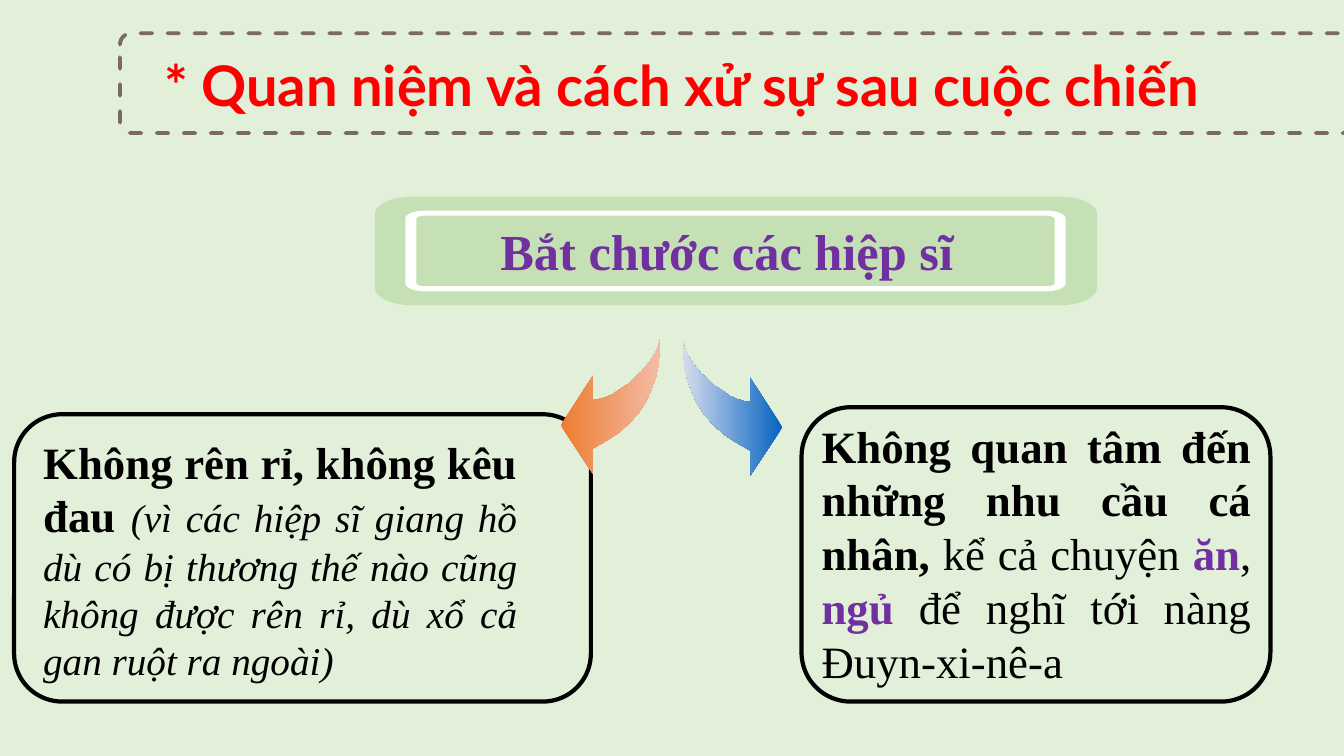
from dataclasses import dataclass
from math import cos, pi, sin

from pptx import Presentation
from pptx.dml.color import RGBColor
from pptx.enum.dml import MSO_LINE_DASH_STYLE as Dash
from pptx.enum.shapes import MSO_SHAPE as Preset
from pptx.enum.text import MSO_AUTO_SIZE as AutoSize, PP_ALIGN as Align
from pptx.oxml.ns import qn
from pptx.util import Inches, Pt

COLORS = {
    "background": "E2F0D9", "title": "FF0000", "frame": "7B6A63",
    "ink": "000000", "accent": "7030A0", "band": "C5E0B4", "white": "FFFFFF",
    "orange": "ED7D31", "peach": "F4BBA7", "blue": "0563C1", "mist": "D8DDEE",
}
SERIF = "Times New Roman"
Point = tuple[float, float]


@dataclass(frozen=True)
class Area:
    left: float
    top: float
    width: float
    height: float

    def lengths(self) -> list[int]:
        return [Inches(v) for v in (self.left, self.top, self.width, self.height)]


@dataclass(frozen=True)
class Span:
    text: str
    size: int = 32
    color: str = "ink"
    bold: bool = False
    italic: bool = False


@dataclass(frozen=True)
class TextBlock:
    area: Area
    spans: list[Span]
    align: Align | None = None
    font: str = SERIF
    grow: bool = True
    top_inset: float = 0.05


@dataclass(frozen=True)
class Frame:
    area: Area
    corner: float
    color: str
    weight: float
    dash: Dash | None = None


@dataclass(frozen=True)
class Arrow:
    tail_x: float
    tail_y: float
    direction: int
    colors: tuple[str, str]
    angle: int


TITLE_FRAME = Frame(Area(1.19, 0.33, 13.93, 0.99), 0.113, "frame", 2.75, Dash.DASH)
CARD_FRAMES = [
    Frame(Area(7.95, 4.04, 4.65, 2.92), 0.167, "ink", 3),
    Frame(Area(0.14, 4.11, 5.72, 2.85), 0.167, "ink", 3),
]
TITLE = TextBlock(
    Area(1.53, 0.45, 13.44, 0.88),
    [Span("* Quan niệm và cách xử sự sau cuộc chiến", 40, "title", True)],
    font="Lato",
)
LEFT_CARD = TextBlock(
    Area(0.33, 4.26, 4.9, 2.59),
    [
        Span("Không rên rỉ, không kêu đau ", bold=True),
        Span("(vì các hiệp sĩ giang hồ dù có bị thương thế nào cũng "
             "không được rên rỉ, dù xổ cả gan ruột ra ngoài)", 28, italic=True),
    ],
    Align.JUSTIFY,
)
RIGHT_CARD = TextBlock(
    Area(8.05, 4.1, 4.46, 2.79),
    [
        Span("Không quan tâm đến những nhu cầu cá nhân, ", bold=True),
        Span("kể cả chuyện "),
        Span("ăn", color="accent", bold=True),
        Span(", "),
        Span("ngủ ", color="accent", bold=True),
        Span("để nghĩ tới nàng Đuyn-xi-nê-a"),
    ],
    Align.JUSTIFY,
)
HEADING = TextBlock(
    Area(4.03, 2.08, 6.36, 0.63),
    [Span("Bắt chước các hiệp sĩ", 36, "accent", True)],
    Align.CENTER, grow=False, top_inset=0.1,
)
ARROWS = [
    Arrow(6.55, 3.34, -1, ("orange", "peach"), 0),
    Arrow(6.77, 3.36, 1, ("blue", "mist"), 180),
]
ARROW_OUTLINE: list[Point] = [
    (0, 0), (0.01, 0.15), (0.02, 0.29), (0.05, 0.42), (0.1, 0.55),
    (0.15, 0.66), (0.22, 0.76), (0.31, 0.86), (0.41, 0.95), (0.53, 1.03),
    (0.67, 1.11), (0.67, 1.36), (0.99, 0.88), (0.67, 0.39), (0.67, 0.63),
    (0.61, 0.62), (0.54, 0.6), (0.47, 0.57), (0.4, 0.52), (0.32, 0.47),
    (0.26, 0.41), (0.19, 0.35), (0.13, 0.28), (0.08, 0.21), (0.04, 0.14),
    (0.01, 0.06),
]


def rgb(name: str) -> RGBColor:
    return RGBColor.from_string(COLORS[name])


def rounded_outline(area: Area, radius_x: float, radius_y: float) -> list[Point]:
    center_x, center_y = area.left + area.width / 2, area.top + area.height / 2
    reach_x, reach_y = area.width / 2 - radius_x, area.height / 2 - radius_y
    points = []
    for quarter, (side_x, side_y) in enumerate([(1, 1), (-1, 1), (-1, -1), (1, -1)]):
        for step in range(9):
            angle = (quarter + step / 8) * pi / 2
            points.append((center_x + side_x * reach_x + radius_x * cos(angle),
                           center_y + side_y * reach_y + radius_y * sin(angle)))
    return points


def add_outline(page, *contours: list[Point]):
    first, *others = [[(Inches(x), Inches(y)) for x, y in contour] for contour in contours]
    builder = page.shapes.build_freeform(*first[0])
    builder.add_line_segments(first[1:], close=True)
    for contour in others:
        builder.move_to(*contour[0])
        builder.add_line_segments(contour[1:], close=True)
    shape = builder.convert_to_shape()
    shape.shadow.inherit = False
    shape.line.fill.background()
    return shape


def fill_solid(shape, color: str) -> None:
    shape.fill.solid()
    shape.fill.fore_color.rgb = rgb(color)


def add_frame(page, frame: Frame) -> None:
    shape = page.shapes.add_shape(Preset.ROUNDED_RECTANGLE, *frame.area.lengths())
    shape.adjustments[0] = frame.corner
    shape.shadow.inherit = False
    shape.fill.background()
    shape.line.color.rgb = rgb(frame.color)
    shape.line.width = Pt(frame.weight)
    if frame.dash:
        shape.line.dash_style = frame.dash
        shape._element.spPr.find(qn("a:ln")).set("cap", "rnd")


def add_text(page, block: TextBlock) -> None:
    box = page.shapes.add_textbox(*block.area.lengths())
    text = box.text_frame
    text.word_wrap = True
    text.auto_size = AutoSize.SHAPE_TO_FIT_TEXT if block.grow else AutoSize.NONE
    text.margin_top = text.margin_bottom = Inches(block.top_inset)
    para = text.paragraphs[0]
    para.alignment = block.align
    para.font.name = block.font
    for span in block.spans:
        run = para.add_run()
        run.text = span.text
        run.font.name = block.font
        run.font.size = Pt(span.size)
        run.font.bold = span.bold
        run.font.italic = span.italic
        run.font.color.rgb = rgb(span.color)


def add_arrow(page, arrow: Arrow) -> None:
    shape = add_outline(page, [(arrow.tail_x + arrow.direction * x, arrow.tail_y + y)
                               for x, y in ARROW_OUTLINE])
    shape.fill.gradient()
    shape.fill.gradient_angle = arrow.angle
    for stop, color in zip(shape.fill.gradient_stops, arrow.colors):
        stop.color.rgb = rgb(color)


def main() -> None:
    deck = Presentation()
    deck.slide_width, deck.slide_height = Inches(13.33), Inches(7.5)
    page = deck.slides.add_slide(deck.slide_layouts[6])

    backdrop = page.shapes.add_shape(Preset.RECTANGLE, *Area(-0.53, 0, 24.78, 7.5).lengths())
    backdrop.shadow.inherit = False
    backdrop.line.fill.background()
    fill_solid(backdrop, "background")

    add_text(page, TITLE)
    for frame in [TITLE_FRAME, *CARD_FRAMES]:
        add_frame(page, frame)
    add_text(page, LEFT_CARD)
    for arrow in ARROWS:
        add_arrow(page, arrow)
    add_text(page, RIGHT_CARD)

    band = rounded_outline(Area(3.72, 1.95, 7.16, 1.08), 0.38, 0.17)
    ring = rounded_outline(Area(4.02, 2.09, 6.55, 0.8), 0.19, 0.08)
    hole = rounded_outline(Area(4.13, 2.14, 6.33, 0.7), 0.08, 0.03)
    fill_solid(add_outline(page, band), "band")
    fill_solid(add_outline(page, ring, hole[::-1]), "white")
    add_text(page, HEADING)
    deck.save("out.pptx")


if __name__ == "__main__":
    main()
